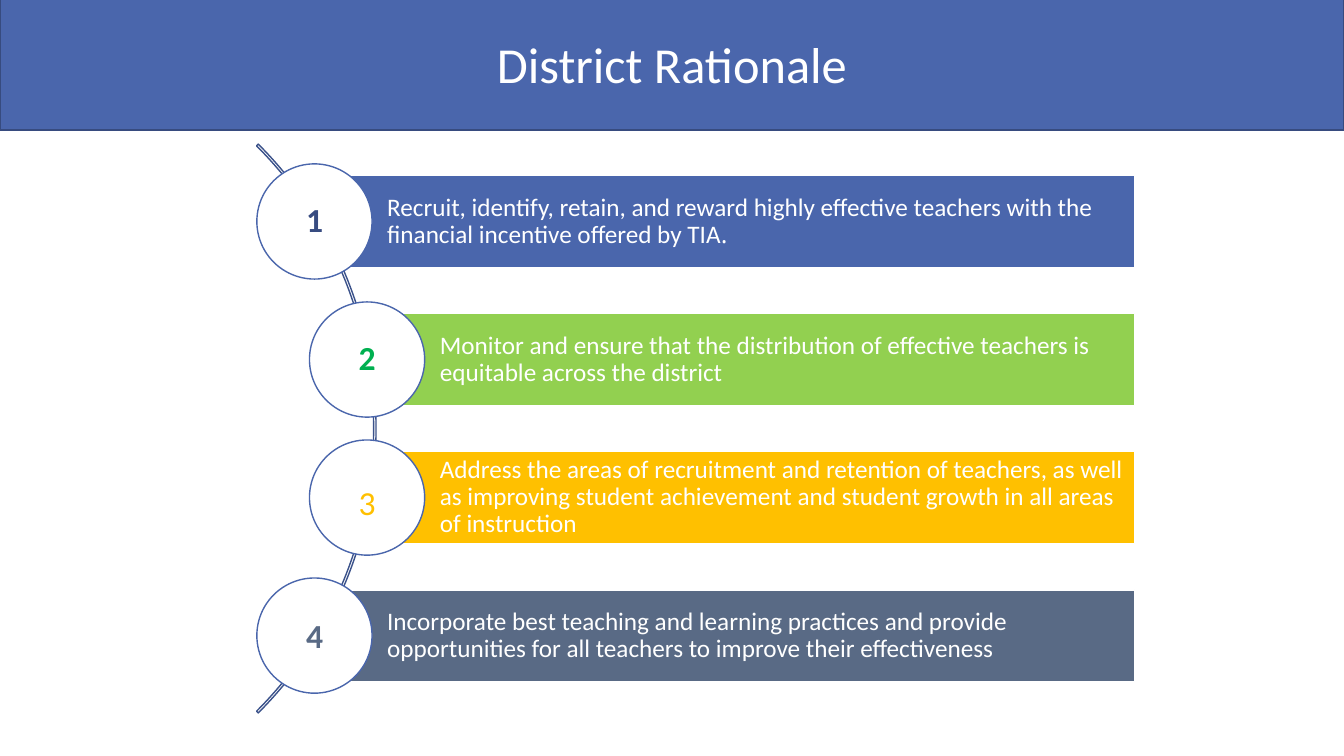
from dataclasses import dataclass

from pptx import Presentation
from pptx.dml.color import RGBColor
from pptx.enum.shapes import MSO_SHAPE
from pptx.enum.text import MSO_ANCHOR, MSO_AUTO_SIZE, PP_ALIGN
from pptx.util import Pt


@dataclass(frozen=True)
class Theme:
    blue: str = "4A66AC"
    edge: str = "374B7F"
    arc: str = "3B528A"
    navy: str = "384C81"
    lime: str = "92D050"
    green: str = "00B050"
    gold: str = "FFC000"
    slate: str = "596A85"
    white: str = "FFFFFF"
    font: str = "Calibri"
    alt: str = "Open Sans"
    head: int = 36
    body: int = 18
    digit: int = 24


THEME = Theme()

# Text, bar colour, digit colour, bold digit, indent of the row, digit offset
ROWS = [
    ("Recruit, identify, retain, and reward highly effective teachers with the "
     "financial incentive offered by TIA", THEME.blue, THEME.navy, True, 0, -19.8),
    ("Monitor and ensure that the distribution of effective teachers is "
     "equitable across the district", THEME.lime, THEME.green, True, 37.6, -19.8),
    ("Address the areas of recruitment and retention of teachers, as well as "
     "improving student achievement and student growth in all areas of "
     "instruction", THEME.gold, THEME.gold, False, 37.6, -14.8),
    ("Incorporate best teaching and learning practices and provide opportunities "
     "for all teachers to improve their effectiveness",
     THEME.slate, THEME.slate, True, 0, -18.4),
]


def style(run, size, color, bold=False, font=THEME.font):
    run.font.size = Pt(size)
    run.font.name = font
    run.font.bold = bold
    run.font.color.rgb = RGBColor.from_string(color)


def paint(shape, fill, line):
    if fill:
        shape.fill.solid()
        shape.fill.fore_color.rgb = RGBColor.from_string(fill)
    else:
        shape.fill.background()
    shape.line.color.rgb = RGBColor.from_string(line)
    shape.line.width = Pt(1)


def draw(slide, kind, box, fill, line):
    shape = slide.shapes.add_shape(kind, *map(Pt, box))
    shape.shadow.inherit = False
    paint(shape, fill, line)
    return shape


def add_head(slide, box, text):
    head = slide.shapes.title
    head.left, head.top, head.width, head.height = map(Pt, box)
    paint(head, THEME.blue, THEME.edge)
    frame = head.text_frame
    frame.text = text
    frame.auto_size = MSO_AUTO_SIZE.NONE
    frame.vertical_anchor = MSO_ANCHOR.MIDDLE
    frame.paragraphs[0].alignment = PP_ALIGN.CENTER
    style(frame.paragraphs[0].runs[0], THEME.head, THEME.white)


def add_bar(slide, box, text, fill):
    bar = draw(slide, MSO_SHAPE.RECTANGLE, box, fill, THEME.white)
    frame = bar.text_frame
    frame.text = text
    frame.word_wrap = True
    frame.vertical_anchor = MSO_ANCHOR.MIDDLE
    frame.margin_left = Pt(52)
    frame.margin_top = frame.margin_right = frame.margin_bottom = Pt(3.6)
    para = frame.paragraphs[0]
    para.alignment = PP_ALIGN.LEFT
    para.line_spacing = 0.9
    style(para.runs[0], THEME.body, THEME.white)
    return para


def add_digit(slide, box, text, color, bold):
    label = slide.shapes.add_textbox(*map(Pt, box))
    frame = label.text_frame
    frame.text = text
    frame.word_wrap = True
    frame.auto_size = MSO_AUTO_SIZE.SHAPE_TO_FIT_TEXT
    style(frame.paragraphs[0].runs[0], THEME.digit, color, bold)


def add_list(slide, box):
    left, top, width, height = box
    step = height / len(ROWS)
    thick, disc = 65.4, 82.3

    # Curved spine, centred on the height of the list
    size = 574.6
    spine = draw(slide, MSO_SHAPE.BLOCK_ARC,
                 (left + 44 - size, top + height / 2 - size / 2, size, size),
                 None, THEME.arc)
    for i, value in enumerate((189, 27, 0.003)):
        spine.adjustments[i] = value

    # Each disc is centred on the left end of its bar
    for i, (text, fill, color, bold, shift, drop) in enumerate(ROWS):
        x, y = left + shift, top + step * (i + 0.5)
        para = add_bar(slide, (x, y - thick / 2, width - shift, thick), text, fill)
        if i == 0:
            stop = para.add_run()
            stop.text = "."
            style(stop, THEME.body, THEME.white, font=THEME.alt)
        draw(slide, MSO_SHAPE.OVAL, (x - disc / 2, y - disc / 2, disc, disc),
             THEME.white, THEME.blue)
        add_digit(slide, (x - 13, y + drop, 45.4, 36), str(i + 1), color, bold)


def main():
    deck = Presentation()
    deck.slide_width, deck.slide_height = Pt(960), Pt(540)
    slide = deck.slides.add_slide(deck.slide_layouts[5])
    add_head(slide, (0, -2, 960, 95), "District Rationale")
    add_list(slide, (224.6, 108.9, 585.8, 394.4))
    deck.save("out.pptx")


if __name__ == "__main__":
    main()
